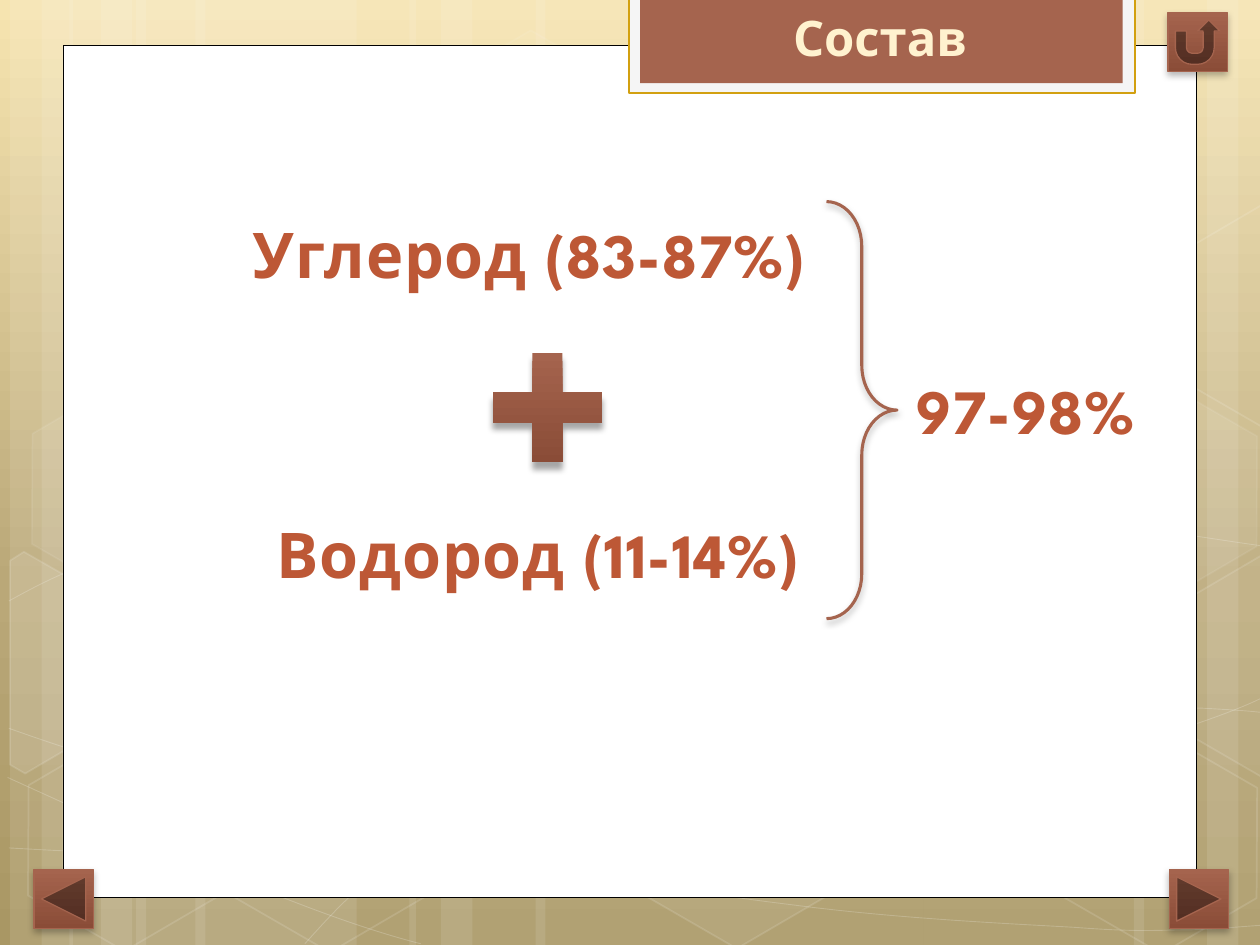
from copy import deepcopy
from dataclasses import dataclass

from lxml.etree import SubElement
from pptx import Presentation
from pptx.dml.color import RGBColor
from pptx.enum.shapes import MSO_SHAPE as Kind
from pptx.enum.text import MSO_ANCHOR, MSO_AUTO_SIZE, PP_ALIGN
from pptx.oxml.ns import qn
from pptx.util import Inches, Pt

COLS, ROWS, CELL = 10, 7.5, Inches(1)
FONT = "League Spartan"
HEX = {"white": "FFFFFF", "black": "000000", "frame": "F5F5F5", "gold": "D2A010",
       "brown": "A5644E", "dark": "8A4C37", "cream": "FFF2CF", "rust": "BD5836",
       "sky": "F6E4B0", "sand": "BAA878", "soil": "A99764"}


@dataclass
class Box:
    """Place on the grid, in columns and rows."""
    x: float
    y: float
    w: float
    h: float

    def emu(self) -> list[int]:
        return [round(n * CELL) for n in (self.x, self.y, self.w, self.h)]


@dataclass
class Label:
    text: str
    box: Box


@dataclass
class Hexa:
    """Tilted hexagon; fill and line are opacities in percent."""
    x: float
    y: float
    fill: int
    line: int


@dataclass
class Shade:
    alpha: int
    blur: float
    dist: float


BARS = [(1.08, 1.75), (0.08, 0.5), (0.33, 0.83), (1.55, 1.75), (0.55, 0.5), (0.8, 0.83),
        (7.33, 1.75), (9.58, 0.5), (9, 0.83), (4.25, 3.08), (3.25, 0.5), (3.5, 0.83)]
# Each curve is a start point, then three points for every Bezier piece.
CURVES = [
    [(0.07, 6.73), (0.61, 6.76), (1.15, 6.79), (1.9, 6.78), (2.65, 6.77), (3.58, 6.75),
     (4.58, 6.65), (5.58, 6.55), (7, 6.36), (7.92, 6.17), (8.83, 5.98), (9.77, 5.68),
     (10.07, 5.51)],
    [(0.07, 4.77), (0.36, 4.61), (0.65, 4.46), (1.21, 4.31), (1.78, 4.16), (2.59, 3.94),
     (3.47, 3.87), (4.36, 3.8), (5.44, 3.79), (6.54, 3.87), (7.64, 3.95), (9.47, 4.26),
     (10.07, 4.34)],
    [(0.06, 6.17), (1.27, 6.72), (2.47, 7.27), (3.34, 7.49)],
    [(0.07, 5.78), (0.38, 5.89), (0.7, 6), (1.28, 6.16), (1.86, 6.31), (2.73, 6.56),
     (3.57, 6.73), (4.4, 6.9), (5.45, 7.08), (6.28, 7.18), (7.11, 7.29), (8, 7.33),
     (8.53, 7.36), (9.05, 7.4), (9.19, 7.38), (9.45, 7.38), (9.71, 7.37), (9.89, 7.35),
     (10.07, 7.34)],
    [(2.42, 7.49), (2.6, 7.29), (2.78, 7.09), (3.02, 6.91), (3.26, 6.73), (3.6, 6.53),
     (3.88, 6.39), (4.16, 6.25), (4.33, 6.19), (4.7, 6.09), (5.06, 5.99), (5.73, 5.85),
     (6.08, 5.78), (6.44, 5.71), (6.49, 5.71), (6.8, 5.69), (7.11, 5.66), (7.6, 5.63),
     (7.94, 5.62), (8.29, 5.61), (8.86, 5.62), (8.86, 5.62), (8.86, 5.62), (9.53, 5.62),
     (9.53, 5.62), (9.71, 5.63), (9.88, 5.64), (9.97, 5.65), (10.06, 5.66), (10.03, 5.65),
     (10.06, 5.66)],
]
HEXAS = [Hexa(3.34, 0.36, 4, 8), Hexa(4.97, 5.89, 6, 12), Hexa(0.11, 5.91, 0, 12),
         Hexa(0.14, 3.12, 7, 8), Hexa(1.74, 5.92, 0, 12), Hexa(8.34, 5.93, 0, 12),
         Hexa(8.34, 3.14, 7, 8)]
CUTS = [  # hexagons cut off by the slide's edge: fill opacity, corners
    (10, [(0.08, 4.45), (0.19, 4.38), (0.96, 4.82), (0.95, 5.7), (0.2, 6.14), (0.08, 6.07)]),
    (4, [(9.26, 4.85), (10.01, 4.41), (10.09, 4.46), (10.09, 6.13), (10.02, 6.17),
         (9.26, 5.73)]),
    (0, [(9.26, 2.07), (10.01, 1.63), (10.1, 1.68), (10.09, 3.35), (10.02, 3.39),
         (9.26, 2.95)]),
]
LABELS = [Label("Углерод (83-87%)", Box(1.84, 1.66, 4.72, 0.71)),
          Label("Водород (11-14%)", Box(1.84, 4.04, 4.86, 0.71)),
          Label("97-98%", Box(7.13, 2.9, 2.02, 0.71))]
BUTTONS = [(Kind.ACTION_BUTTON_FORWARD_OR_NEXT, 9.28, 6.9),
           (Kind.ACTION_BUTTON_RETURN, 9.27, 0.1),
           (Kind.ACTION_BUTTON_BACK_OR_PREVIOUS, 0.27, 6.9)]
SOFT = Shade(28, 4, 2)


def rgb(name: str) -> RGBColor:
    return RGBColor.from_string(HEX[name])


def fade(node, pct: int) -> None:
    """Set the opacity of the solid fill inside node."""
    SubElement(node.find(qn("a:solidFill"))[0], qn("a:alpha"), val=str(pct * 1000))


def paint(shape, fill: str = "", line: str = "", wide: float = 1,
          clear: int = 100, faint: int = 100) -> None:
    """Colour fill and line; clear and faint are their opacities."""
    shape.shadow.inherit = False
    props = shape._element.spPr
    if fill and clear:
        shape.fill.solid()
        shape.fill.fore_color.rgb = rgb(fill)
        if clear < 100:
            fade(props, clear)
    else:
        shape.fill.background()
    if line:
        shape.line.color.rgb = rgb(line)
        shape.line.width = Pt(wide)
        if faint < 100:
            fade(props.find(qn("a:ln")), faint)
    else:
        shape.line.fill.background()


def blend(fill, stops: list[tuple[float, str]]) -> None:
    """Fill with a gradient from top to bottom."""
    fill.gradient()
    fill.gradient_angle = 270
    first = fill.gradient_stops[0]._gs
    for _ in stops[2:]:
        first.addnext(deepcopy(first))
    for stop, (pos, name) in zip(fill.gradient_stops, stops):
        stop.position = pos
        stop.color.rgb = rgb(name)


def drop(shape, shade: Shade) -> None:
    """Cast a shadow straight down."""
    glow = SubElement(shape._element.spPr.find(qn("a:effectLst")), qn("a:outerShdw"),
                      blurRad=str(Pt(shade.blur)), dist=str(Pt(shade.dist)),
                      dir="5400000", rotWithShape="0")
    tint = SubElement(glow, qn("a:srgbClr"), val=HEX["black"])
    SubElement(tint, qn("a:alpha"), val=str(shade.alpha * 1000))


def add(slide, kind: Kind, box: Box, **look):
    shape = slide.shapes.add_shape(kind, *box.emu())
    paint(shape, **look)
    return shape


def trace(slide, dots: list, close: bool, **look):
    """Draw an outline through grid points."""
    (x, y), *rest = [(round(a * CELL), round(b * CELL)) for a, b in dots]
    pen = slide.shapes.build_freeform(x, y)
    pen.add_line_segments(rest, close=close)
    shape = pen.convert_to_shape()
    paint(shape, line="white", **look)
    return shape


def bend(shape) -> None:
    """Turn every three line segments into one Bezier piece."""
    lines = list(shape._element.iter(qn("a:lnTo")))
    route = lines[0].getparent()
    for i in range(0, len(lines), 3):
        piece = SubElement(route, qn("a:cubicBezTo"))
        for line in lines[i:i + 3]:
            piece.append(line[0])
            route.remove(line)


def write(shape, text: str, size: int, name: str, space: int = 0) -> None:
    frame = shape.text_frame
    frame.text = text
    frame.word_wrap = False
    frame.auto_size = MSO_AUTO_SIZE.NONE
    frame.vertical_anchor = MSO_ANCHOR.TOP
    para = frame.paragraphs[0]
    para.alignment = PP_ALIGN.CENTER
    font = para.font
    font.name, font.size, font.bold = FONT, Pt(size), True
    font.color.rgb = rgb(name)
    if space:
        para.runs[0]._r.get_or_add_rPr().set("spc", str(space))


def back(slide) -> None:
    """Draw the backdrop, the white panel and the title's plate."""
    blend(slide.background.fill, [(0, "sky"), (0.62, "sand"), (1, "soil")])
    for x, w in BARS:
        add(slide, Kind.RECTANGLE, Box(x, 0, w, ROWS), fill="white", clear=10)
    for dots in CURVES:
        bend(trace(slide, dots, False, wide=0.5, faint=20))
    for hexa in HEXAS:
        shape = add(slide, Kind.HEXAGON, Box(hexa.x, hexa.y, 1.75, 1.52), fill="white",
                    line="white", clear=hexa.fill, faint=hexa.line)
        shape.adjustments[0] = 0.285
        shape.rotation = 30
    for clear, dots in CUTS:
        trace(slide, dots, True, fill="white", clear=clear, faint=12)
    add(slide, Kind.RECTANGLE, Box(0.5, 0.36, 9, 6.76), fill="white", line="black", wide=0.5)
    add(slide, Kind.RECTANGLE, Box(4.99, -0.02, 4.02, 0.76), fill="frame", line="gold",
        wide=1.25)
    add(slide, Kind.RECTANGLE, Box(5.08, -0.02, 3.83, 0.68), fill="brown")


def main() -> None:
    deck = Presentation()
    deck.slide_width, deck.slide_height = round(COLS * CELL), round(ROWS * CELL)
    slide = deck.slides.add_slide(deck.slide_layouts[5])
    back(slide)

    title = slide.shapes.title
    title.left, title.top, title.width, title.height = Box(6.14, 0.01, 1.69, 0.57).emu()
    write(title, "Состав", 28, "cream")
    slide.shapes._spTree.append(title._element)
    for label in LABELS:
        write(slide.shapes.add_textbox(*label.box.emu()), label.text, 36, "rust", 50)

    ramp = [(0, "brown"), (1, "dark")]
    plus = add(slide, Kind.CROSS, Box(3.91, 2.8, 0.87, 0.87))
    plus.adjustments[0] = 0.362
    blend(plus.fill, ramp)
    drop(plus, Shade(34, 3.5, 4))
    brace = add(slide, Kind.RIGHT_BRACE, Box(6.56, 1.6, 0.56, 3.31), line="brown", wide=1.75)
    brace.adjustments[0] = 0.635
    drop(brace, SOFT)
    for kind, x, y in BUTTONS:
        button = add(slide, kind, Box(x, y, 0.47, 0.47), line="brown", wide=0.75)
        blend(button.fill, ramp)
        drop(button, SOFT)
    deck.save("out.pptx")


if __name__ == "__main__":
    main()
